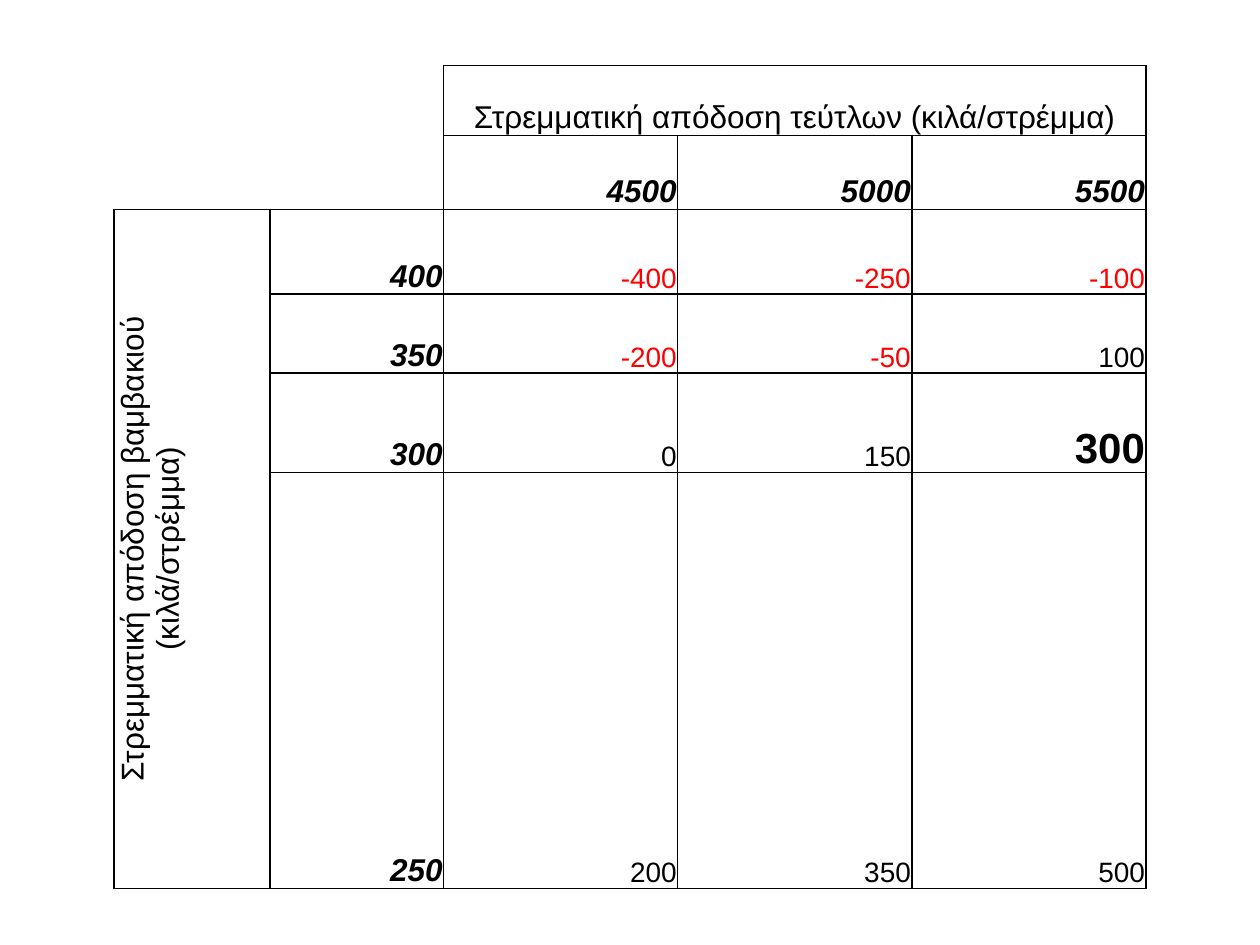
import pptx
import pptx.dml.color
import pptx.enum.text
import pptx.oxml
import pptx.oxml.ns
import pptx.table
import pptx.util
from dataclasses import dataclass

Cm = pptx.util.Cm
RGBColor = pptx.dml.color.RGBColor
Align = pptx.enum.text.PP_ALIGN

BLACK = RGBColor(0x00, 0x00, 0x00)
RED = RGBColor(0xFF, 0x00, 0x00)
FONT = "Arial"
COLUMN_WIDTHS = [3.14, 3.5, 4.72, 4.72, 4.72]
ROW_HEIGHTS = [1.41, 1.49, 1.71, 1.59, 2.0, 2.69]
BEET_YIELDS = ["4500", "5000", "5500"]
COTTON_YIELDS = ["400", "350", "300", "250"]
PROFITS = [
    ["-400", "-250", "-100"],
    ["-200", "-50", "100"],
    ["0", "150", "300"],
    ["200", "350", "500"],
]
HIGHLIGHT = (2, 2)


@dataclass(frozen=True)
class TextStyle:
    size: int
    color: RGBColor = BLACK
    bold: bool = False
    italic: bool = False
    align: Align = Align.RIGHT


TITLE = TextStyle(18, align=Align.CENTER)
HEADING = TextStyle(18, bold=True, italic=True)
GAIN = TextStyle(16)
LOSS = TextStyle(16, color=RED)
BEST = TextStyle(24, bold=True)


def set_borders(cell: pptx.table._Cell, sides: str) -> None:
    properties = cell._tc.get_or_add_tcPr()
    for side in "LRTB":
        paint = f'<a:solidFill><a:srgbClr val="{BLACK}"/></a:solidFill>' if side in sides else "<a:noFill/>"
        properties.append(pptx.oxml.parse_xml(
            f'<a:ln{side} {pptx.oxml.ns.nsdecls("a")} w="{pptx.util.Pt(1)}">{paint}</a:ln{side}>'
        ))


def border_sides(row: int, column: int) -> str:
    if row >= 2 or column >= 2:
        return "LRTB"
    return ("R" if column == 1 else "") + ("B" if row == 1 else "")


def write_cell(cell: pptx.table._Cell, text: str, style: TextStyle) -> None:
    cell.text_frame.text = text
    cell.vertical_anchor = pptx.enum.text.MSO_ANCHOR.BOTTOM
    cell.margin_left = cell.margin_right = cell.margin_top = Cm(0.02)
    cell.margin_bottom = 0
    paragraph = cell.text_frame.paragraphs[0]
    paragraph.alignment = style.align
    font = paragraph.runs[0].font
    font.name = FONT
    font.size = pptx.util.Pt(style.size)
    font.bold = style.bold
    font.italic = style.italic
    font.color.rgb = style.color


def profit_style(row: int, column: int) -> TextStyle:
    if (row, column) == HIGHLIGHT:
        return BEST
    return LOSS if PROFITS[row][column].startswith("-") else GAIN


def add_yield_table(page) -> None:
    frame = page.shapes.add_table(
        len(ROW_HEIGHTS), len(COLUMN_WIDTHS), Cm(2.3), Cm(1.32),
        Cm(sum(COLUMN_WIDTHS)), Cm(sum(ROW_HEIGHTS)),
    )
    table = frame.table
    table.first_row = table.horz_banding = False
    for column, width in zip(table.columns, COLUMN_WIDTHS):
        column.width = Cm(width)
    for row, height in zip(table.rows, ROW_HEIGHTS):
        row.height = Cm(height)
    for row in range(len(ROW_HEIGHTS)):
        for column in range(len(COLUMN_WIDTHS)):
            cell = table.cell(row, column)
            set_borders(cell, border_sides(row, column))
            cell.fill.background()

    beet_title = table.cell(0, 2)
    beet_title.merge(table.cell(0, 4))
    write_cell(beet_title, "Στρεμματική απόδοση τεύτλων (κιλά/στρέμμα)", TITLE)
    cotton_title = table.cell(2, 0)
    cotton_title.merge(table.cell(5, 0))
    write_cell(cotton_title, "Στρεμματική απόδοση βαμβακιού (κιλά/στρέμμα)", TITLE)
    cotton_title._tc.get_or_add_tcPr().set("vert", "vert270")

    for column, beet_yield in enumerate(BEET_YIELDS):
        write_cell(table.cell(1, column + 2), beet_yield, HEADING)
    for row, cotton_yield in enumerate(COTTON_YIELDS):
        write_cell(table.cell(row + 2, 1), cotton_yield, HEADING)
        for column, profit in enumerate(PROFITS[row]):
            write_cell(table.cell(row + 2, column + 2), profit, profit_style(row, column))


def main() -> None:
    deck = pptx.Presentation()
    deck.slide_width = Cm(25.4)
    deck.slide_height = Cm(19.05)
    page = deck.slides.add_slide(deck.slide_layouts[6])
    add_yield_table(page)
    deck.save("out.pptx")


if __name__ == "__main__":
    main()
